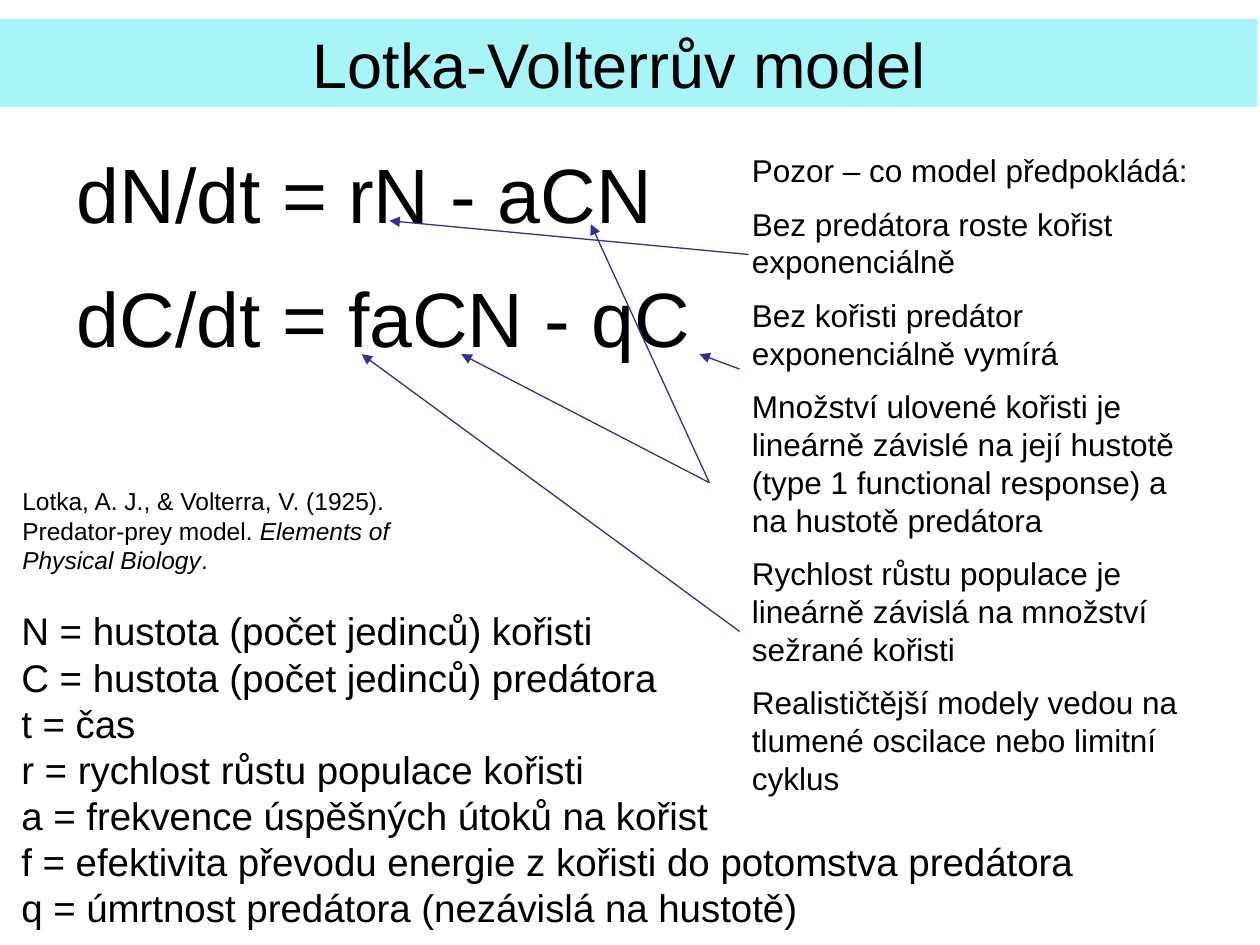
"""Builds the slide on the Lotka-Volterra predator-prey model."""
import pptx
import pptx.dml.color
import pptx.enum.shapes
import pptx.enum.text
import pptx.oxml
import pptx.oxml.ns
import pptx.util

Cm = pptx.util.Cm
Pt = pptx.util.Pt
RGB = pptx.dml.color.RGBColor.from_string

THEME = {
    "font": "Arial",
    "ink": "000000",
    "band": "A7F5F7",
    "arrow": "2F2F98",
    "arrow_width": 0.75,
    "sizes": {"title": 36, "equation": 44, "legend": 22, "assumption": 18, "citation": 14},
}

TITLE = "Lotka-Volterrův model"
EQUATIONS = ["dN/dt = rN - aCN", "dC/dt = faCN - qC"]
LEGEND = [
    "N = hustota (počet jedinců) kořisti",
    "C = hustota (počet jedinců) predátora",
    "t = čas",
    "r = rychlost růstu populace kořisti",
    "a = frekvence úspěšných útoků na kořist",
    "f = efektivita převodu energie z kořisti do potomstva predátora",
    "q = úmrtnost predátora (nezávislá na hustotě)",
]
ASSUMPTIONS = [
    "Pozor – co model předpokládá:",
    "Bez predátora roste kořist exponenciálně",
    "Bez kořisti predátor exponenciálně vymírá",
    "Množství ulovené kořisti je lineárně závislé na její hustotě "
    "(type 1 functional response) a na hustotě predátora",
    "Rychlost růstu populace je lineárně závislá na množství sežrané kořisti",
    "Realističtější modely vedou na tlumené oscilace nebo limitní cyklus",
]
CITATION = [
    ("Lotka, A. J., & Volterra, V. (1925). Predator-prey model.\u00a0", False),
    ("Elements of Physical Biology", True),
    (".", False),
]

TITLE_BOX = (-0.05, 0.38, 25.4, 1.78)
EQUATION_BOX = (1.3, 2.82, 24.1, 2.11)
EQUATION_PITCH = 2.51
LEGEND_BOX = (0.18, 12.12, 22, 6.83)
ASSUMPTION_BOX = (14.91, 2.92, 9.4, 13.72)
CITATION_BOX = (0.2, 9.68, 9.4, 2.06)

HUNTING = (14.3, 9.73)
ARROWS = [
    ((15.09, 5.13), (7.85, 4.45)),
    ((14.91, 7.44), (14.1, 7.14)),
    (HUNTING, (11.91, 4.52)),
    (HUNTING, (9.3, 7.14)),
    ((14.91, 12.73), (7.29, 7.14)),
]


def set_format(target, values):
    for name, value in values.items():
        setattr(target, name, value)


def write(frame, paragraphs, role, **paragraph_format):
    for index, runs in enumerate(paragraphs):
        paragraph = frame.add_paragraph() if index else frame.paragraphs[0]
        set_format(paragraph, paragraph_format)
        for text, italic in runs:
            run = paragraph.add_run()
            run.text = text
            set_format(run.font, {
                "name": THEME["font"],
                "size": Pt(THEME["sizes"][role]),
                "italic": italic,
            })
            run.font.color.rgb = RGB(THEME["ink"])


def plain(lines):
    return [[(line, False)] for line in lines]


def add_text(slide, box, paragraphs, role, wrap=True, **paragraph_format):
    frame = slide.shapes.add_textbox(*map(Cm, box)).text_frame
    frame.word_wrap = wrap
    write(frame, paragraphs, role, **paragraph_format)


def add_title(slide):
    title = slide.shapes.title
    set_format(title, dict(zip(("left", "top", "width", "height"), map(Cm, TITLE_BOX))))
    title.fill.solid()
    title.fill.fore_color.rgb = RGB(THEME["band"])
    set_format(title.text_frame, {
        "auto_size": pptx.enum.text.MSO_AUTO_SIZE.NONE,
        "vertical_anchor": pptx.enum.text.MSO_ANCHOR.MIDDLE,
        "margin_right": Cm(0.6),
    })
    write(title.text_frame, plain([TITLE]), "title", alignment=pptx.enum.text.PP_ALIGN.CENTER)


def add_arrow(slide, start, end):
    arrow = slide.shapes.add_connector(
        pptx.enum.shapes.MSO_CONNECTOR.STRAIGHT, *map(Cm, start + end))
    arrow.line.color.rgb = RGB(THEME["arrow"])
    arrow.line.width = Pt(THEME["arrow_width"])
    namespace = pptx.oxml.ns.nsdecls("a")
    arrow.line._get_or_add_ln().append(
        pptx.oxml.parse_xml(f'<a:tailEnd {namespace} type="triangle"/>'))
    arrow._element.spPr.append(pptx.oxml.parse_xml(f"<a:effectLst {namespace}/>"))


def main():
    deck = pptx.Presentation()
    set_format(deck, {"slide_width": Cm(25.4), "slide_height": Cm(19.05)})
    slide = deck.slides.add_slide(deck.slide_layouts.get_by_name("Title Only"))
    left, top, width, height = EQUATION_BOX
    for row, equation in enumerate(EQUATIONS):
        box = (left, top + row * EQUATION_PITCH, width, height)
        add_text(slide, box, plain([equation]), "equation")
    add_title(slide)
    add_text(slide, LEGEND_BOX, plain(LEGEND), "legend", wrap=False)
    add_text(slide, ASSUMPTION_BOX, plain(ASSUMPTIONS), "assumption", space_after=Pt(9))
    for start, end in ARROWS:
        add_arrow(slide, start, end)
    add_text(slide, CITATION_BOX, [CITATION], "citation")
    deck.save("out.pptx")


if __name__ == "__main__":
    main()
